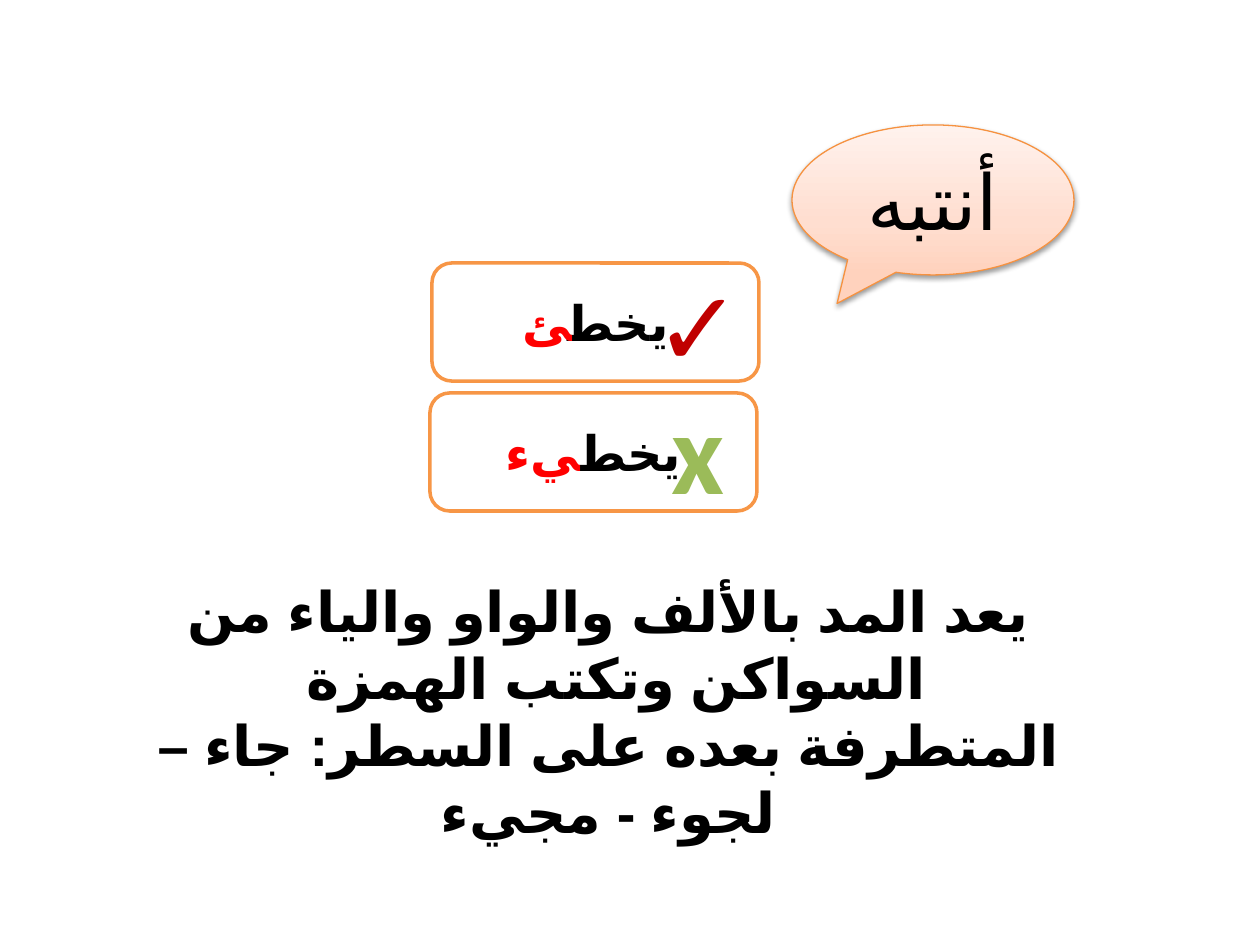
from lxml import etree
from pptx import Presentation
from pptx.dml.color import RGBColor
from pptx.enum.lang import MSO_LANGUAGE_ID as Language
from pptx.enum.shapes import MSO_SHAPE as Shape
from pptx.enum.text import MSO_ANCHOR as Anchor, MSO_AUTO_SIZE as AutoSize, PP_ALIGN as Align
from pptx.oxml import parse_xml
from pptx.oxml.ns import nsdecls, qn
from pptx.util import Pt

PX = 914400 / 126


def color(value):
    return RGBColor.from_string(value)


def write(frame, lines, size, align=Align.CENTER, font="Calibri"):
    frame.word_wrap = True
    for index, runs in enumerate(lines):
        paragraph = frame.add_paragraph() if index else frame.paragraphs[0]
        paragraph.alignment = align
        paragraph._p.get_or_add_pPr().set("rtl", "1")
        for text, value in runs:
            run = paragraph.add_run()
            run.text = text
            run.font.name = font
            run.font.size = Pt(size)
            run.font.bold = True
            run.font.language_id = Language.ARABIC
            run.font.color.rgb = color(value)
            etree.SubElement(run.font._element, qn("a:cs"), typeface="Arial")


presentation = Presentation()
presentation.slide_width = round(1260 * PX)
presentation.slide_height = round(945 * PX)
slide = presentation.slides.add_slide(presentation.slide_layouts[6])

callout = slide.shapes.add_shape(
    Shape.OVAL_CALLOUT, *[round(n * PX) for n in (792, 125, 282, 150)])
callout.adjustments[0] = -0.34
callout.adjustments[1] = 0.69
callout.line.color.rgb = color("F69240")
callout.line.width = Pt(0.75)
stops = "".join(
    f'<a:gs pos="{position}"><a:srgbClr val="{value}"/></a:gs>'
    for position, value in ((0, "FFD2BD"), (35000, "FFDED0"), (100000, "FFF2ED")))
callout._element.spPr.find(qn("a:prstGeom")).addnext(parse_xml(
    f'<a:gradFill {nsdecls("a")} rotWithShape="1"><a:gsLst>{stops}</a:gsLst>'
    '<a:lin ang="16200000" scaled="1"/></a:gradFill>'))
callout._element.spPr.append(parse_xml(
    f'<a:effectLst {nsdecls("a")}><a:outerShdw blurRad="40000" dist="20000" dir="5400000" '
    'rotWithShape="0"><a:srgbClr val="000000"><a:alpha val="38000"/></a:srgbClr>'
    '</a:outerShdw></a:effectLst>'))
callout.text_frame.vertical_anchor = Anchor.MIDDLE
write(callout.text_frame, [[("أنتبه", "000000")]], 44)
callout.text_frame.paragraphs[0].runs[0].font.bold = False

for left, top, ending in ((432, 263, "ئ"), (430, 393, "يء")):
    card = slide.shapes.add_shape(
        Shape.ROUNDED_RECTANGLE, *[round(n * PX) for n in (left, top, 327, 118)])
    card.shadow.inherit = False
    card.fill.solid()
    card.fill.fore_color.rgb = color("FFFFFF")
    card.line.color.rgb = color("F79646")
    card.line.width = Pt(2)
    card.text_frame.vertical_anchor = Anchor.MIDDLE
    write(card.text_frame, [[("يخط", "000000"), (ending, "FF0000")]], 28)

rule = [[("يعد المد بالألف والواو والياء من السواكن وتكتب الهمزة ", "000000")],
        [("المتطرفة بعده على السطر: جاء – لجوء - مجيء", "000000")]]
boxes = (
    ((541, 255, 214, 140), [[("✓", "C00000"), (" ", "C00000")]], 60, Align.RIGHT, "Arial"),
    ((608, 373, 129, 152), [[("x", "9BBB59")]], 66, Align.RIGHT, "Calibri"),
    ((117, 570, 983, 217), rule, 32, Align.CENTER, "Calibri"),
)
for place, lines, size, align, font in boxes:
    box = slide.shapes.add_textbox(*[round(n * PX) for n in place])
    box.text_frame.auto_size = AutoSize.SHAPE_TO_FIT_TEXT
    write(box.text_frame, lines, size, align, font)
    if font == "Arial":
        check, space = box.text_frame.paragraphs[0].runs
        space.font.size = Pt(44)
        for run in (check, space):
            outline = etree.Element(qn("a:ln"), w="12700")
            fill = etree.SubElement(outline, qn("a:solidFill"))
            etree.SubElement(fill, qn("a:srgbClr"), val="C00000")
            run.font._element.insert(0, outline)

presentation.save("out.pptx")
